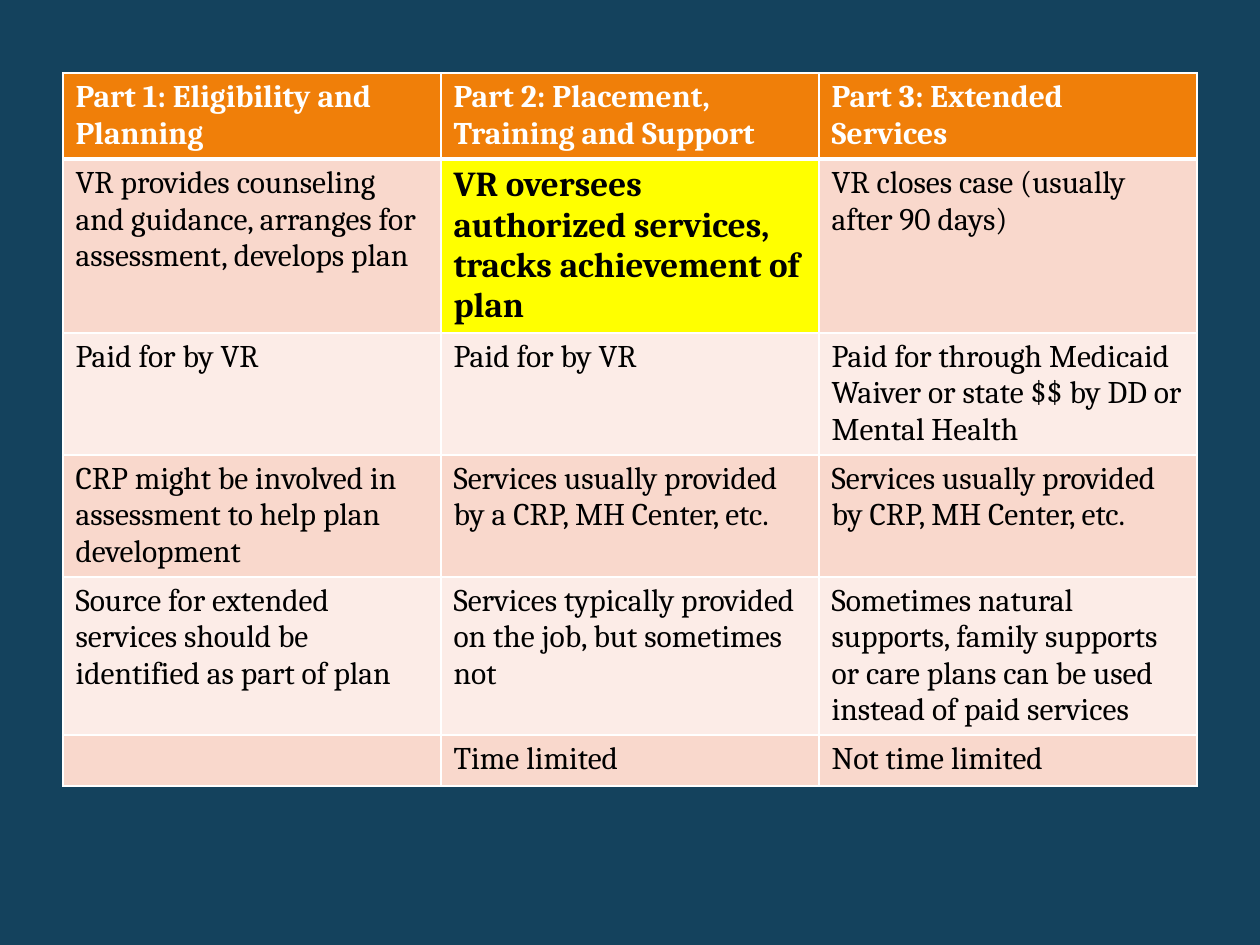
from lxml.etree import SubElement
from pptx import Presentation
from pptx.dml.color import RGBColor
from pptx.oxml.ns import qn
from pptx.util import Emu, Pt

SCALE = 914400 / 126
WHITE, BLACK = "FFFFFF", "000000"
ORANGE, YELLOW = "F07F09", "FFFF00"
BANDS = ("FCECE7", "F9D8CC")
HEAD = {"size": Pt(18), "bold": True, "name": "Cambria"}
BODY = {**HEAD, "bold": False}
FOCUS = {**HEAD, "size": Pt(20)}
FOCUS_AT = (1, 1)
COL = 378
ROWS = (86, 174, 122, 122, 158, 51)
TEXTS = (
    ("Part 1: Eligibility and Planning",
     "Part 2: Placement, Training and Support",
     "Part 3: Extended Services"),
    ("VR provides counseling and guidance, arranges for assessment, develops plan",
     "VR oversees authorized services, tracks achievement of plan",
     "VR closes case (usually after 90 days)"),
    ("Paid for by VR",
     "Paid for by VR",
     "Paid for through Medicaid Waiver or state $$ by DD or Mental Health"),
    ("CRP might be involved in assessment to help plan development",
     "Services usually provided by a CRP, MH Center, etc.",
     "Services usually provided by CRP, MH Center, etc."),
    ("Source for extended services should be identified as part of plan",
     "Services typically provided on the job, but sometimes not",
     "Sometimes natural supports, family supports or care plans can be used instead of paid services"),
    ("", "Time limited", "Not time limited"),
)


def px(count):
    """Turn whole pixels into EMU."""
    return Emu(round(count * SCALE))


def paint(fill, color):
    """Give a fill one solid colour."""
    fill.solid()
    fill.fore_color.rgb = RGBColor.from_string(color)


def edge(cell, widths):
    """Draw white cell borders, widths in points by side."""
    props = cell._tc.get_or_add_tcPr()
    for side, width in widths.items():
        line = SubElement(props, qn(f"a:ln{side}"), w=str(Pt(width)))
        fill = SubElement(line, qn("a:solidFill"))
        SubElement(fill, qn("a:srgbClr"), val=WHITE)


def style(row, col):
    """Return the fill, text colour and font format of a cell."""
    if row == 0:
        return ORANGE, WHITE, HEAD
    if (row, col) == FOCUS_AT:
        return YELLOW, BLACK, FOCUS
    return BANDS[row % 2], BLACK, BODY


def write(cell, text, color, form):
    """Put formatted text in a cell."""
    cell.text = text
    font = cell.text_frame.paragraphs[0].font
    if text:
        font = cell.text_frame.paragraphs[0].runs[0].font
    for name, value in form.items():
        setattr(font, name, value)
    font.color.rgb = RGBColor.from_string(color)


def grid(slide):
    """Add the table of the three service parts."""
    count = len(TEXTS[0])
    frame = slide.shapes.add_table(
        len(ROWS), count, px(63), px(73), px(COL * count), px(sum(ROWS)))
    table = frame.table
    for col in table.columns:
        col.width = px(COL)
    for row, (high, texts) in enumerate(zip(ROWS, TEXTS)):
        table.rows[row].height = px(high)
        for col, text in enumerate(texts):
            cell = table.cell(row, col)
            back, color, form = style(row, col)
            top = 3 if row == 1 else 1
            base = 3 if row == 0 else 1
            edge(cell, {"L": 1, "R": 1, "T": top, "B": base})
            paint(cell.fill, back)
            write(cell, text, color, form)


def main():
    """Build and save the slide."""
    deck = Presentation()
    deck.slide_width, deck.slide_height = px(1260), px(945)
    slide = deck.slides.add_slide(deck.slide_layouts[6])
    paint(slide.background.fill, "14425D")
    grid(slide)
    deck.save("out.pptx")


if __name__ == "__main__":
    main()
